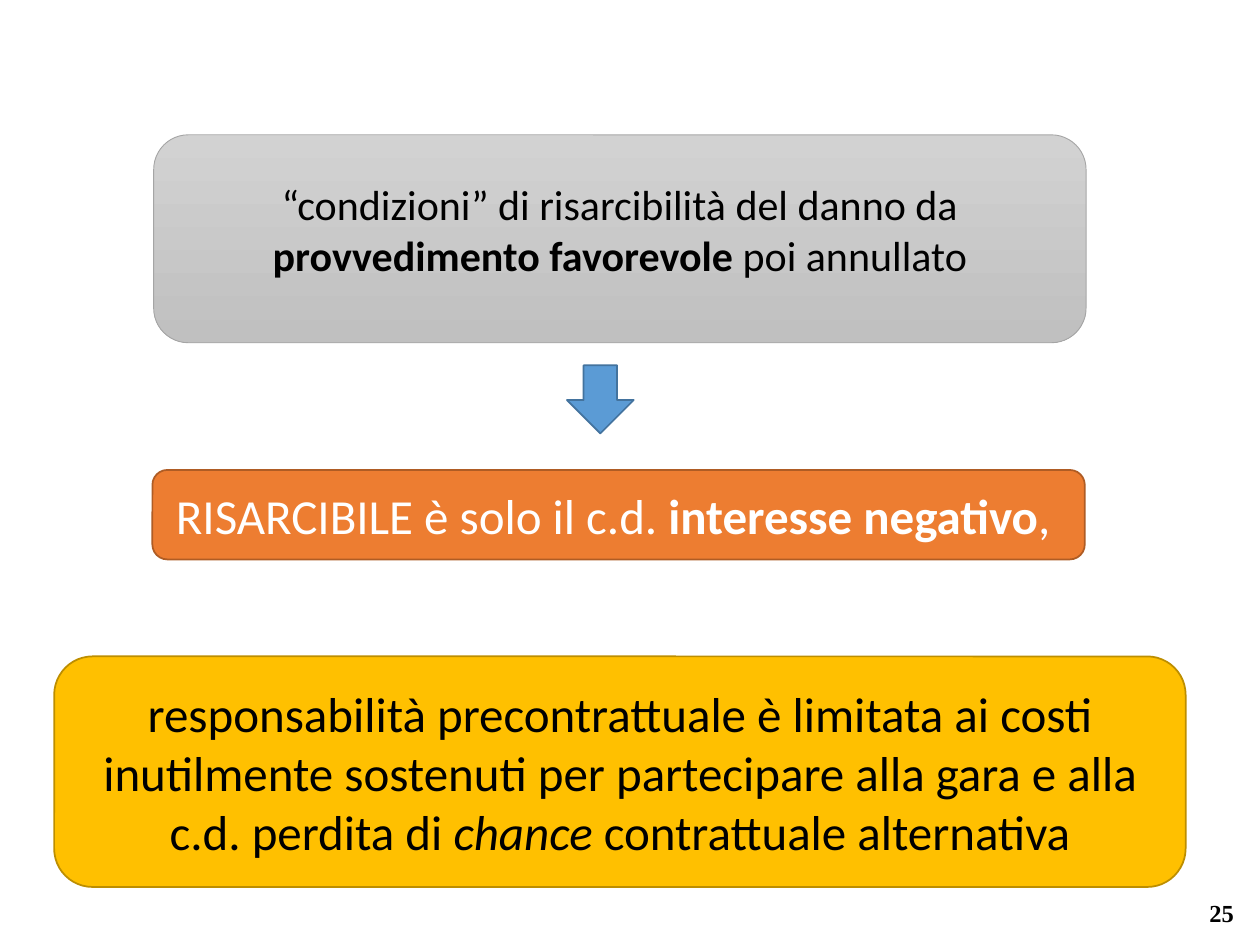
from pptx import Presentation
from pptx.dml.color import RGBColor
from pptx.enum.shapes import MSO_SHAPE as Shape
from pptx.enum.text import MSO_ANCHOR as Anchor, PP_ALIGN as Align
from pptx.util import Inches, Pt

WIDTH, HEIGHT = 10, 7.5
COLORS = {
    "black": "000000", "white": "FFFFFF",
    "grey_top": "D2D2D2", "grey_bottom": "C0C0C0", "grey_line": "A5A5A5",
    "orange": "ED7D31", "orange_line": "AF5C24",
    "blue": "5B9BD5", "blue_line": "43739E",
    "yellow": "FFC000", "yellow_line": "BD8E00",
}


def color(name):
    return RGBColor.from_string(COLORS[name])


def place(left, top, width, height):
    """Turn inches on the slide into a position and a size."""
    return [Inches(length) for length in (left, top, width, height)]


def write_text(shape, runs, size, text_color, align=Align.CENTER,
               font_name="Calibri"):
    """Write one paragraph from (text, format values) pairs."""
    frame = shape.text_frame
    frame.word_wrap = True
    frame.vertical_anchor = Anchor.MIDDLE
    paragraph = frame.paragraphs[0]
    paragraph.alignment = align
    for text, extra in runs:
        run = paragraph.add_run()
        run.text = text
        values = {"name": font_name, "size": Pt(size), **extra}
        for attribute, value in values.items():
            setattr(run.font, attribute, value)
        run.font.color.rgb = color(text_color)


def add_figure(slide, kind, box, fills, line, line_width=1):
    """Add a preset shape with a plain fill, or a vertical gradient of two."""
    shape = slide.shapes.add_shape(kind, *place(*box))
    shape.shadow.inherit = False
    if len(fills) == 1:
        shape.fill.solid()
        shape.fill.fore_color.rgb = color(fills[0])
    else:
        shape.fill.gradient()
        shape.fill.gradient_angle = 270
        for stop, name in zip(shape.fill.gradient_stops, fills):
            stop.color.rgb = color(name)
    shape.line.color.rgb = color(line)
    shape.line.width = Pt(line_width)
    return shape


def add_page_number(slide, number):
    box = slide.shapes.add_textbox(*place(7.64, 7.04, 2.25, 0.4))
    write_text(box, [(number, {"bold": True})], 14, "black", Align.RIGHT,
               "Times New Roman")


def main():
    presentation = Presentation()
    presentation.slide_width = Inches(WIDTH)
    presentation.slide_height = Inches(HEIGHT)
    slide = presentation.slides.add_slide(presentation.slide_layouts[6])

    add_page_number(slide, "25")

    # Topic, with its text a little above the middle
    topic = add_figure(slide, Shape.ROUNDED_RECTANGLE, (1.22, 1.07, 7.4, 1.65),
                       ["grey_top", "grey_bottom"], "grey_line", 0.5)
    topic.text_frame.margin_bottom = Inches(0.2)
    write_text(topic, [
        ("“condizioni” di risarcibilità del danno da ", {}),
        ("provvedimento favorevole ", {"bold": True}),
        ("poi annullato", {}),
    ], 24, "black")

    # Rule that follows from the topic
    rule = add_figure(slide, Shape.ROUNDED_RECTANGLE, (1.21, 3.73, 7.4, 0.71),
                      ["orange"], "orange_line")
    write_text(rule, [
        ("RISARCIBILE è solo il c.d. ", {}),
        ("interesse negativo", {"bold": True}),
        (", ", {}),
    ], 28, "white")

    # Arrow from topic to rule
    add_figure(slide, Shape.DOWN_ARROW, (4.5, 2.9, 0.53, 0.54),
               ["blue"], "blue_line")

    # Limits of the liability
    limits = add_figure(slide, Shape.ROUNDED_RECTANGLE,
                        (0.43, 5.21, 8.98, 1.83), ["yellow"], "yellow_line")
    write_text(limits, [
        ("responsabilità precontrattuale è limitata ai costi inutilmente "
         "sostenuti per partecipare alla gara e alla c.d. perdita di ", {}),
        ("chance ", {"italic": True}),
        ("contrattuale alternativa", {}),
    ], 28, "black")

    presentation.save("out.pptx")


if __name__ == "__main__":
    main()
